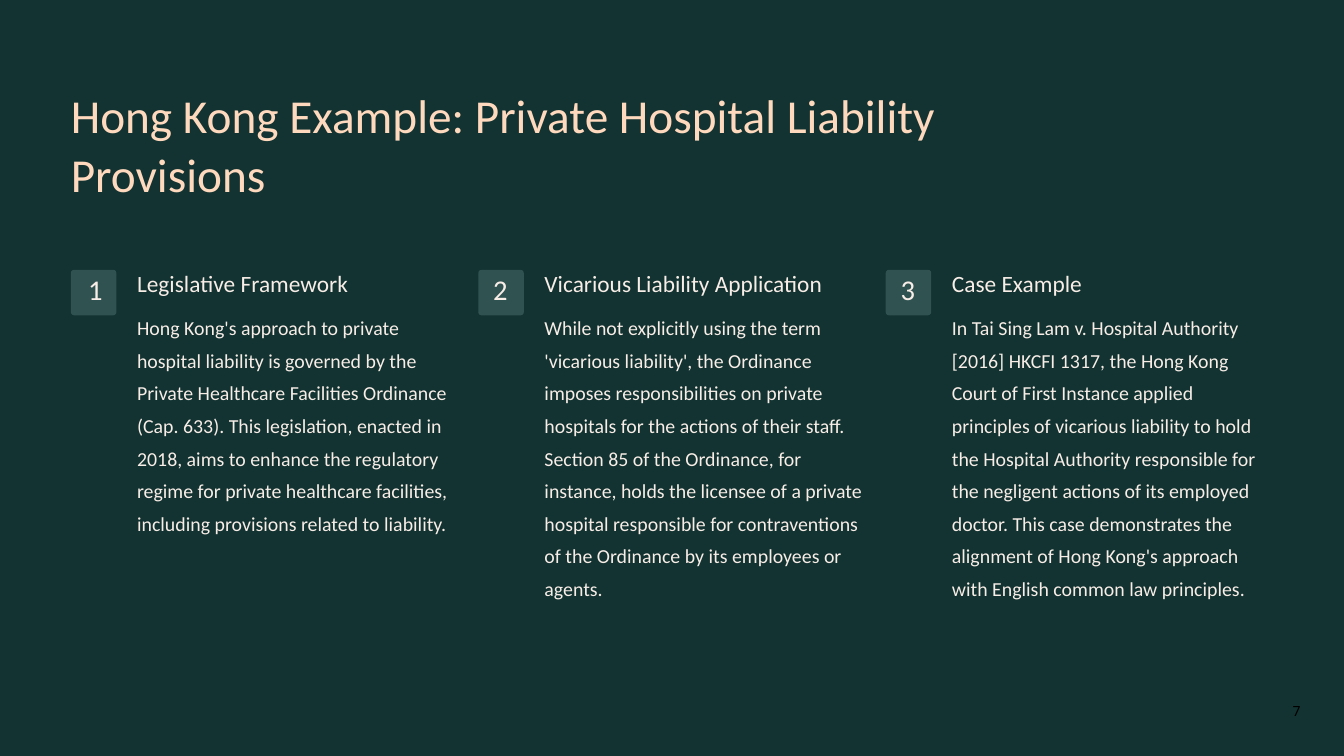
"""Build the slide on private hospital liability provisions in Hong Kong."""
from dataclasses import dataclass

from pptx import Presentation
from pptx.dml.color import RGBColor
from pptx.enum import shapes, text
from pptx.util import Pt


@dataclass(frozen=True)
class Theme:
    font: str = "Calibri"
    page_font: str = "Noto Sans"
    background: str = "123331"
    badge: str = "305251"
    title: str = "FFD9BD"
    body: str = "F8EDE7"
    page: str = "000000"
    title_size: float = 40.5
    number_size: float = 24.5
    heading_size: float = 20
    body_size: float = 17
    page_size: float = 12


COLUMNS = [
    ("Legislative Framework",
     "Hong Kong's approach to private hospital liability is governed by the Private "
     "Healthcare Facilities Ordinance (Cap. 633). This legislation, enacted in 2018, aims "
     "to enhance the regulatory regime for private healthcare facilities, including "
     "provisions related to liability.", 14, 287),
    ("Vicarious Liability Application",
     "While not explicitly using the term 'vicarious liability', the Ordinance imposes "
     "responsibilities on private hospitals for the actions of their staff. Section 85 of "
     "the Ordinance, for instance, holds the licensee of a private hospital responsible for "
     "contraventions of the Ordinance by its employees or agents.", 12, 287),
    ("Case Example",
     "In Tai Sing Lam v. Hospital Authority [2016] HKCFI 1317, the Hong Kong Court of First "
     "Instance applied principles of vicarious liability to hold the Hospital Authority "
     "responsible for the negligent actions of its employed doctor. This case demonstrates "
     "the alignment of Hong Kong's approach with English common law principles.", 12, 343),
]
LEFT, PITCH = 60.8, 349.2


class Deck:
    def __init__(self, theme):
        self.t = theme
        self.prs = Presentation()
        self.prs.slide_width, self.prs.slide_height = Pt(1152), Pt(648)
        self.s = self.prs.slides.add_slide(self.prs.slide_layouts[5])
        self.paint(self.s.background, theme.background)

    def paint(self, target, color):
        target.fill.solid()
        target.fill.fore_color.rgb = RGBColor.from_string(color)

    def set_text(self, sp, paragraphs):
        tf = sp.text_frame
        frame = dict(word_wrap=True, auto_size=text.MSO_AUTO_SIZE.NONE,
                     vertical_anchor=text.MSO_ANCHOR.TOP, margin_left=Pt(0.7),
                     margin_right=0, margin_top=Pt(0.7), margin_bottom=0)
        for name, value in frame.items():
            setattr(tf, name, value)
        for i, (words, size, color, font, layout) in enumerate(paragraphs):
            p = tf.add_paragraph() if i else tf.paragraphs[0]
            p.alignment = text.PP_ALIGN.LEFT
            for name, value in layout.items():
                setattr(p, name, value)
            r = p.add_run()
            r.text = words
            r.font.size, r.font.name = Pt(size), font
            r.font.color.rgb = RGBColor.from_string(color)

    def title(self, words, x, y, w, h):
        sp = self.s.shapes.title
        sp.left, sp.top, sp.width, sp.height = map(Pt, (x, y, w, h))
        self.set_text(sp, [(words, self.t.title_size, self.t.title, self.t.font,
                            dict(line_spacing=Pt(51)))])
        sp.text_frame.margin_top = 0

    def label(self, paragraphs, x, y, w, h):
        sp = self.s.shapes.add_textbox(*map(Pt, (x, y, w, h)))
        self.set_text(sp, paragraphs)
        return sp

    def badge(self, x, y, side):
        sp = self.s.shapes.add_shape(shapes.MSO_SHAPE.ROUNDED_RECTANGLE,
                                     *map(Pt, (x, y, side, side)))
        sp.adjustments[0] = 0.07
        sp.shadow.inherit = False
        sp.line.fill.background()
        self.paint(sp, self.t.badge)

    def column(self, i, heading, body, number_shift, height):
        t, x = self.t, LEFT + i * PITCH
        self.badge(x, 231.3, 39)
        self.label([(str(i + 1), t.number_size, t.body, t.font,
                     dict(space_before=Pt(0.9)))], x + number_shift, 232, 15, 32)
        self.label([(heading, t.heading_size, t.body, t.font, dict(space_before=Pt(1.1))),
                    (body, t.body_size, t.body, t.font,
                     dict(space_before=Pt(8.8), line_spacing=1.37))],
                   x + 56, 229.7, 275, height)

    def page_number(self, number):
        t = self.t
        sp = self.label([(number, t.page_size, t.page, t.page_font,
                          dict(space_before=Pt(1.8)))], 1105, 600.5, 20, 18)
        sp.text_frame.margin_left, sp.text_frame.margin_top = Pt(3), Pt(2)


def main():
    deck = Deck(Theme())
    deck.title("Hong Kong Example: Private Hospital Liability Provisions", 60, 71.3, 834.5, 101.5)
    for i, column in enumerate(COLUMNS):
        deck.column(i, *column)
    deck.page_number("7")
    deck.prs.save("out.pptx")


if __name__ == "__main__":
    main()
